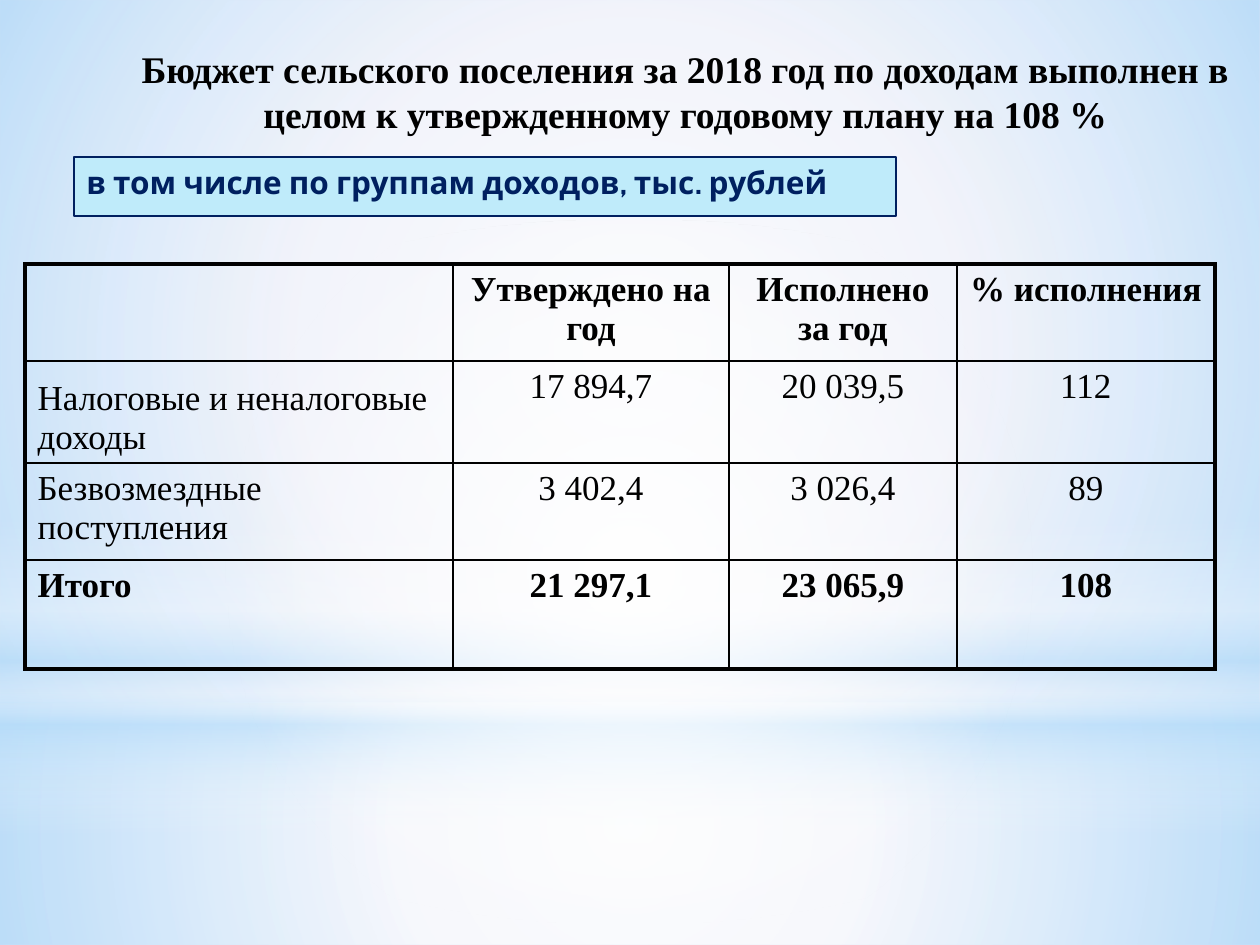
"""Build a slide on village budget income: title, caption and results table."""
from lxml import etree
from pptx import Presentation
from pptx.dml.color import RGBColor
from pptx.enum.shapes import MSO_SHAPE
from pptx.enum.text import MSO_ANCHOR, PP_ALIGN
from pptx.oxml.ns import qn
from pptx.util import Emu, Pt

RECT, OVAL = MSO_SHAPE.RECTANGLE, MSO_SHAPE.OVAL
LEFT, CENTER = PP_ALIGN.LEFT, PP_ALIGN.CENTER
TOP, BOTTOM = MSO_ANCHOR.TOP, MSO_ANCHOR.BOTTOM
BLACK = RGBColor(0x00, 0x00, 0x00)
WHITE = RGBColor(0xFF, 0xFF, 0xFF)
NAVY = RGBColor(0x00, 0x20, 0x60)
AQUA = RGBColor(0xBF, 0xEB, 0xFA)
SKY = RGBColor(0xB4, 0xDC, 0xFA)
MIST = RGBColor(0xDC, 0xE1, 0xF4)
SERIF, SANS = "Times New Roman", "Cabin"
THIN, THICK = Pt(1), Pt(2.25)

GLOWS = [
    (RECT, (0, 703, 1260, 242), [(0, WHITE, 91), (37, WHITE, 76), (100, SKY, 79)], None),
    (RECT, (0, 0, 1260, 703), [(0, WHITE, 89), (48, WHITE, 62), (100, SKY, 79)], None),
    (RECT, (0, 519, 1260, 315), [(0, WHITE, 0), (29, WHITE, 30), (45, SKY, 40),
                                 (55, WHITE, 26), (65, SKY, 60), (100, WHITE, 0)], 90),
    (OVAL, (0, 220, 1260, 703), [(0, WHITE, 100), (56, WHITE, 0)], None),
]
TITLE = ("Бюджет сельского поселения за 2018 год по доходам выполнен "
         "в целом к утвержденному годовому плану на 108 %")
CAPTION = "в том числе по группам доходов, тыс. рублей"
ROWS = [
    ("", "Утверждено на год", "Исполнено за год", "% исполнения"),
    ("Налоговые и неналоговые доходы", "17 894,7", "20 039,5", "112"),
    ("Безвозмездные поступления", "3 402,4", "3 026,4", "89"),
    ("Итого", "21 297,1", "23 065,9", "108"),
]
COLUMN_WIDTHS = (428, 276, 228, 258)
ROW_HEIGHTS = (97, 102, 97, 109)


def px(length):
    return Emu(round(length * 914400 / 126))


def add_node(parent, tag, **values):
    return etree.SubElement(parent, qn(tag), {key: str(value) for key, value in values.items()})


class Page:
    """Holds the text style and the current slide."""

    def __init__(self, deck, background):
        self.style = {"name": SERIF, "size": Pt(20), "bold": False}
        self.slide = deck.slides.add_slide(deck.slide_layouts[6])
        fill = self.slide.background.fill
        fill.solid()
        fill.fore_color.rgb = background

    def set_text(self, frame, text, color=BLACK, align=LEFT, anchor=TOP, **changes):
        frame.word_wrap = True
        frame.vertical_anchor = anchor
        para = frame.paragraphs[0]
        para.alignment = align
        span = para.add_run()
        span.text = text
        for name, value in {**self.style, **changes}.items():
            setattr(span.font, name, value)
        span.font.color.rgb = color

    def shape(self, kind, place):
        shape = self.slide.shapes.add_shape(kind, *map(px, place))
        shape.shadow.inherit = False
        return shape

    def glow(self, kind, place, stops, angle):
        shape = self.shape(kind, place)
        shape.fill.background()
        shape.line.fill.background()
        blank = shape.element.spPr.find(qn("a:noFill"))
        gradient = etree.Element(qn("a:gradFill"), rotWithShape="1")
        blank.getparent().replace(blank, gradient)
        stop_list = add_node(gradient, "a:gsLst")
        for position, color, opacity in stops:
            stop = add_node(stop_list, "a:gs", pos=position * 1000)
            tint = add_node(stop, "a:srgbClr", val=color)
            add_node(tint, "a:alpha", val=opacity * 1000)
        if angle is None:
            circle = add_node(gradient, "a:path", path="circle")
            add_node(circle, "a:fillToRect", l=50000, t=50000, r=50000, b=50000)
        else:
            add_node(gradient, "a:lin", ang=angle * 60000, scaled=0)

    def text(self, place, text, **changes):
        box = self.slide.shapes.add_textbox(*map(px, place))
        self.set_text(box.text_frame, text, **changes)

    def label(self, place, text, fill, line, **changes):
        box = self.shape(RECT, place)
        box.fill.solid()
        box.fill.fore_color.rgb = fill
        box.line.color.rgb = line
        box.line.width = Pt(0.75)
        self.set_text(box.text_frame, text, **changes)

    def borders(self, cell, widths):
        properties = cell._tc.get_or_add_tcPr()
        for index, (side, width) in enumerate(widths.items()):
            line = etree.Element(qn(f"a:ln{side}"), w=str(width))
            properties.insert(index, line)
            add_node(add_node(line, "a:solidFill"), "a:srgbClr", val=BLACK)

    def table(self, left, top, rows, widths, heights):
        place = map(px, (left, top, sum(widths), sum(heights)))
        table = self.slide.shapes.add_table(len(rows), len(widths), *place).table
        table.first_row = table.horz_banding = False
        for column, width in zip(table.columns, widths):
            column.width = px(width)
        for row, height in zip(table.rows, heights):
            row.height = px(height)
        last_row, last_column = len(rows) - 1, len(widths) - 1
        for r, texts in enumerate(rows):
            for c, text in enumerate(texts):
                cell = table.cell(r, c)
                cell.fill.background()
                outer = {"L": c == 0, "R": c == last_column, "T": r == 0, "B": r == last_row}
                self.borders(cell, {side: THICK if edge else THIN for side, edge in outer.items()})
                if text:
                    self.set_text(cell.text_frame, text, align=CENTER if c else LEFT,
                                  bold=r in (0, last_row))
        table.cell(1, 0).vertical_anchor = BOTTOM


def main():
    deck = Presentation()
    deck.slide_width, deck.slide_height = px(1260), px(945)
    page = Page(deck, MIST)
    for glow in GLOWS:
        page.glow(*glow)
    page.text((129, 39, 1113, 103), TITLE, align=CENTER, anchor=BOTTOM, size=Pt(21.5), bold=True)
    page.label((74, 157, 822, 59), CAPTION, AQUA, NAVY, color=NAVY, name=SANS, size=Pt(18), bold=True)
    page.table(25, 264, ROWS, COLUMN_WIDTHS, ROW_HEIGHTS)
    deck.save("out.pptx")


if __name__ == "__main__":
    main()
